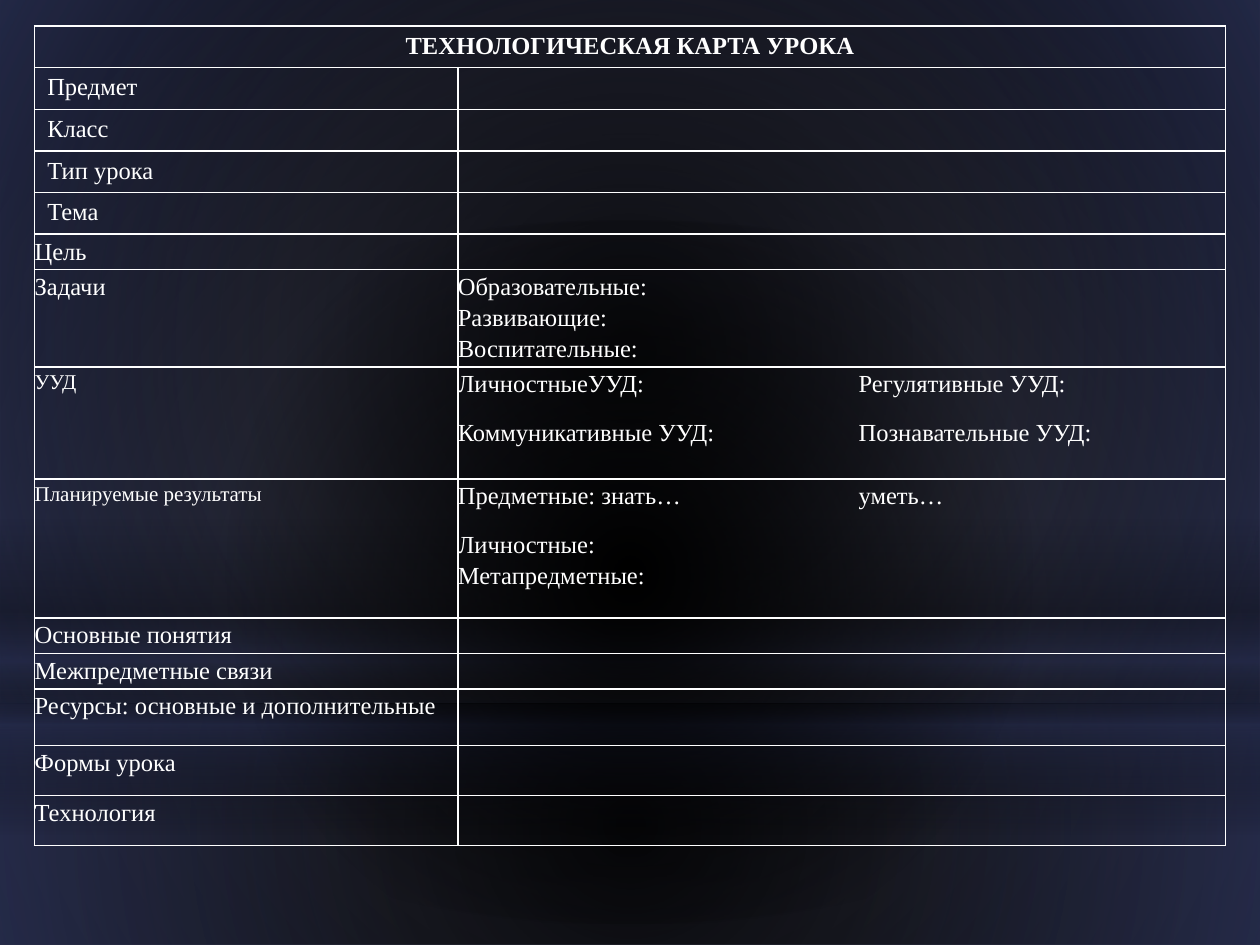
import pptx
import pptx.util
import pptx.dml.color
import pptx.enum.shapes
import pptx.enum.text
import pptx.oxml.ns
from lxml import etree

Pt = pptx.util.Pt
qn = pptx.oxml.ns.qn

# Content: label, right-hand paragraphs, row height, format of the row
FORM = {"size": 14, "inset": (7.2, 3.6), "leading": None, "after": None}
BODY = {"size": 14, "inset": (0, 0), "leading": 1.15, "after": 10}
SMALL = dict(BODY, size=12)
TITLE = "ТЕХНОЛОГИЧЕСКАЯ КАРТА УРОКА"
ROWS = [
    ("Предмет", [], 23.8, FORM),
    ("Класс", [], 23.8, FORM),
    ("Тип урока", [], 23.8, FORM),
    ("Тема", [], 23.8, FORM),
    ("Цель", [], 20.3, BODY),
    ("Задачи", ["Образовательные:\vРазвивающие:\vВоспитательные:"], 55.7, BODY),
    ("УУД", ["ЛичностныеУУД:\tРегулятивные УУД:",
             "Коммуникативные УУД:\tПознавательные УУД:"], 64, SMALL),
    ("Планируемые результаты", ["Предметные: знать…\tуметь…",
                                "Личностные:\vМетапредметные:"], 79.4, SMALL),
    ("Основные понятия", [], 20.3, BODY),
    ("Межпредметные связи", [], 20.3, BODY),
    ("Ресурсы: основные и дополнительные", [], 32.3, BODY),
    ("Формы урока", [], 28.6, BODY),
    ("Технология", [], 28.6, BODY),
]
COLUMNS = (241.8, 438.6)
TAB_STOP = 229
FONT, INK = "Times New Roman", "FFFFFF"

# Backdrop: shape, box, stops (position, colour, opacity), focus or angle
CENTRE = (50, 50, 50, 50)
PAGE_STOPS = [(0, "7B7F9E", 100), (42, "5E6280", 100), (100, "2C304C", 100)]
PAGE_FOCUS = (24, 44, 24, 12)
LAYERS = [
    ("RECTANGLE", (0, 401.8, 720, 138.2),
     [(0, "000000", 91), (37, "000000", 76), (100, "212745", 79)], CENTRE),
    ("RECTANGLE", (0, 0, 720, 401.8),
     [(0, "000000", 89), (48, "000000", 62), (100, "212745", 79)], CENTRE),
    ("RECTANGLE", (0, 296.6, 720, 180),
     [(0, "000000", 0), (29, "000000", 30), (45, "212745", 40),
      (55, "000000", 26), (65, "212745", 60), (100, "000000", 0)], 90),
    ("OVAL", (0, 126, 720, 401.8),
     [(0, "000000", 100), (56, "000000", 0)], CENTRE),
]


def color(value):
    return pptx.dml.color.RGBColor.from_string(value)


def add(parent, tag, **values):
    return etree.SubElement(parent, qn(tag),
                            {key: str(value) for key, value in values.items()})


def set_gradient(fill, holder, stops, direction):
    """Replace a solid fill by a circular (focus) or linear (angle) gradient."""
    fill.solid()
    solid = holder.find(".//" + qn("a:solidFill"))
    gradient = etree.Element(qn("a:gradFill"), rotWithShape="1")
    solid.getparent().replace(solid, gradient)
    stop_list = add(gradient, "a:gsLst")
    for position, value, opacity in stops:
        stop = add(stop_list, "a:gs", pos=position * 1000)
        add(add(stop, "a:srgbClr", val=value), "a:alpha", val=opacity * 1000)
    if isinstance(direction, tuple):
        focus = add(gradient, "a:path", path="circle")
        sides = {side: part * 1000 for side, part in zip("ltrb", direction)}
        add(focus, "a:fillToRect", **sides)
    else:
        add(gradient, "a:lin", ang=direction * 60000, scaled=0)


def set_borders(cell):
    properties = cell._tc.get_or_add_tcPr()
    for side in "LRTB":
        line = add(properties, f"a:ln{side}", w=int(Pt(1)))
        add(add(line, "a:solidFill"), "a:srgbClr", val=INK)


def fill_cell(cell, texts, style, bold=False):
    set_borders(cell)
    cell.fill.background()
    across, down = style["inset"]
    margins = {"margin_left": across, "margin_right": across,
               "margin_top": down, "margin_bottom": down}
    for name, value in margins.items():
        setattr(cell, name, Pt(value))
    frame = cell.text_frame
    for index, text in enumerate(texts or [""]):
        para = frame.add_paragraph() if index else frame.paragraphs[0]
        if not text:
            add(para._p, "a:endParaRPr", sz=style["size"] * 100)
            continue
        para.text = text
        if style["after"]:
            para.line_spacing = style["leading"]
            para.space_after = Pt(style["after"])
        if "\t" in text:
            tabs = add(para._p.get_or_add_pPr(), "a:tabLst")
            add(tabs, "a:tab", pos=int(Pt(TAB_STOP)), algn="l")
        for span in para.runs:
            looks = {"name": FONT, "size": Pt(style["size"]), "bold": bold}
            for name, value in looks.items():
                setattr(span.font, name, value)
            span.font.color.rgb = color(INK)


def main():
    deck = pptx.Presentation()
    deck.slide_width, deck.slide_height = Pt(720), Pt(540)
    page = deck.slides.add_slide(deck.slide_layouts[6])

    # Backdrop
    set_gradient(page.background.fill, page._element, PAGE_STOPS, PAGE_FOCUS)
    for kind, place, stops, direction in LAYERS:
        preset = getattr(pptx.enum.shapes.MSO_SHAPE, kind)
        layer = page.shapes.add_shape(preset, *map(Pt, place))
        layer.shadow.inherit = False
        layer.line.fill.background()
        set_gradient(layer.fill, layer._element, stops, direction)

    # Lesson table
    heights = [23.8] + [row[2] for row in ROWS]
    table = page.shapes.add_table(len(heights), len(COLUMNS), Pt(19.8), Pt(14.9),
                                  Pt(sum(COLUMNS)), Pt(sum(heights))).table
    table.first_row = table.horz_banding = False
    for column, width in zip(table.columns, COLUMNS):
        column.width = Pt(width)
    for row, height in zip(table.rows, heights):
        row.height = Pt(height)

    heading = table.cell(0, 0)
    heading.merge(table.cell(0, 1))
    fill_cell(heading, [TITLE], FORM, bold=True)
    fill_cell(table.cell(0, 1), [], FORM)
    heading.text_frame.paragraphs[0].alignment = pptx.enum.text.PP_ALIGN.CENTER
    for index, (label, details, _, style) in enumerate(ROWS, start=1):
        fill_cell(table.cell(index, 0), [label], style)
        fill_cell(table.cell(index, 1), details, BODY)

    deck.save("out.pptx")


if __name__ == "__main__":
    main()
